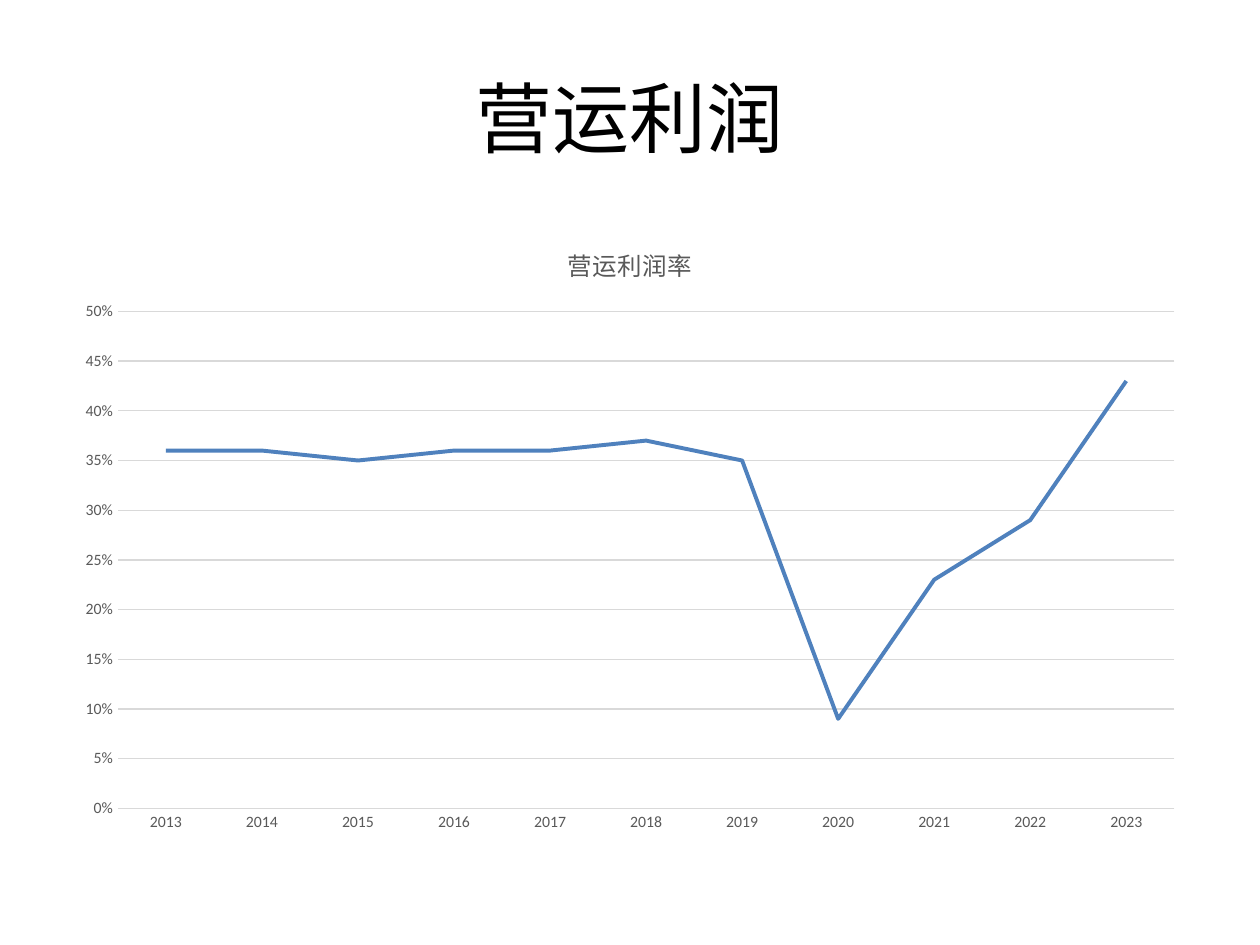
from pptx import Presentation
from pptx.chart.data import CategoryChartData
from pptx.dml.color import RGBColor
from pptx.enum.chart import XL_CHART_TYPE, XL_MARKER_STYLE, XL_TICK_MARK
from pptx.enum.text import MSO_ANCHOR, PP_ALIGN
from pptx.util import Inches, Pt

LINE_CHART = XL_CHART_TYPE.LINE
NO_MARKER = XL_MARKER_STYLE.NONE
NO_TICK = XL_TICK_MARK.NONE
MIDDLE = MSO_ANCHOR.MIDDLE
CENTER = PP_ALIGN.CENTER

BLACK = RGBColor(0x00, 0x00, 0x00)
GRAY = RGBColor(0x59, 0x59, 0x59)
LIGHT_GRAY = RGBColor(0xD9, 0xD9, 0xD9)
BLUE = RGBColor(0x4F, 0x81, 0xBD)

FONT = "Calibri"
MARGIN_RATES = [0.36, 0.36, 0.35, 0.36, 0.36, 0.37, 0.35, 0.09, 0.23, 0.29, 0.43]


def set_font(font, size, color):
    values = {"name": FONT, "size": Pt(size), "bold": False}
    for name, value in values.items():
        setattr(font, name, value)
    font.color.rgb = color


def set_line(line, width, color):
    line.width = Pt(width)
    line.color.rgb = color


deck = Presentation()
deck.slide_width, deck.slide_height = Inches(10), Inches(7.5)
page = deck.slides.add_slide(deck.slide_layouts[5])

# Slide title
title = page.shapes.title
title_place = {"left": 0.5, "top": 0.3, "width": 9, "height": 1.25}
for name, value in title_place.items():
    setattr(title, name, Inches(value))
title.text_frame.text = "营运利润"
title.text_frame.vertical_anchor = MIDDLE
para = title.text_frame.paragraphs[0]
para.alignment = CENTER
set_font(para.runs[0].font, 44, BLACK)

# Operating margin by year
data = CategoryChartData(number_format="0%")
data.categories = [str(year) for year in range(2013, 2024)]
data.add_series("营运利润率", MARGIN_RATES)
chart = page.shapes.add_chart(
    LINE_CHART, Inches(0.5), Inches(1.75), Inches(9), Inches(4.95), data
).chart
set_font(chart.font, 10, BLACK)
chart.has_legend = False

# Chart title
chart.has_title = True
chart.chart_title.include_in_layout = False
chart.chart_title.text_frame.text = "营运利润率"
span = chart.chart_title.text_frame.paragraphs[0].runs[0]
set_font(span.font, 14, GRAY)

# Line
chart.plots[0].vary_by_categories = False
series = chart.plots[0].series[0]
series.smooth = False
series.marker.style = NO_MARKER
set_line(series.format.line, 2.25, BLUE)

# Axes and gridlines
year_axis, rate_axis = chart.category_axis, chart.value_axis
for axis in (year_axis, rate_axis):
    axis.major_tick_mark = NO_TICK
    axis.minor_tick_mark = NO_TICK
    set_font(axis.tick_labels.font, 9, GRAY)
set_line(year_axis.format.line, 0.75, LIGHT_GRAY)

rate_scale = {"minimum_scale": 0, "maximum_scale": 0.5, "major_unit": 0.05}
for name, value in rate_scale.items():
    setattr(rate_axis, name, value)
rate_axis.format.line.fill.background()
rate_axis.has_major_gridlines = True
set_line(rate_axis.major_gridlines.format.line, 0.75, LIGHT_GRAY)
rate_axis.tick_labels.number_format = "0%"
rate_axis.tick_labels.number_format_is_linked = False

deck.save("out.pptx")
